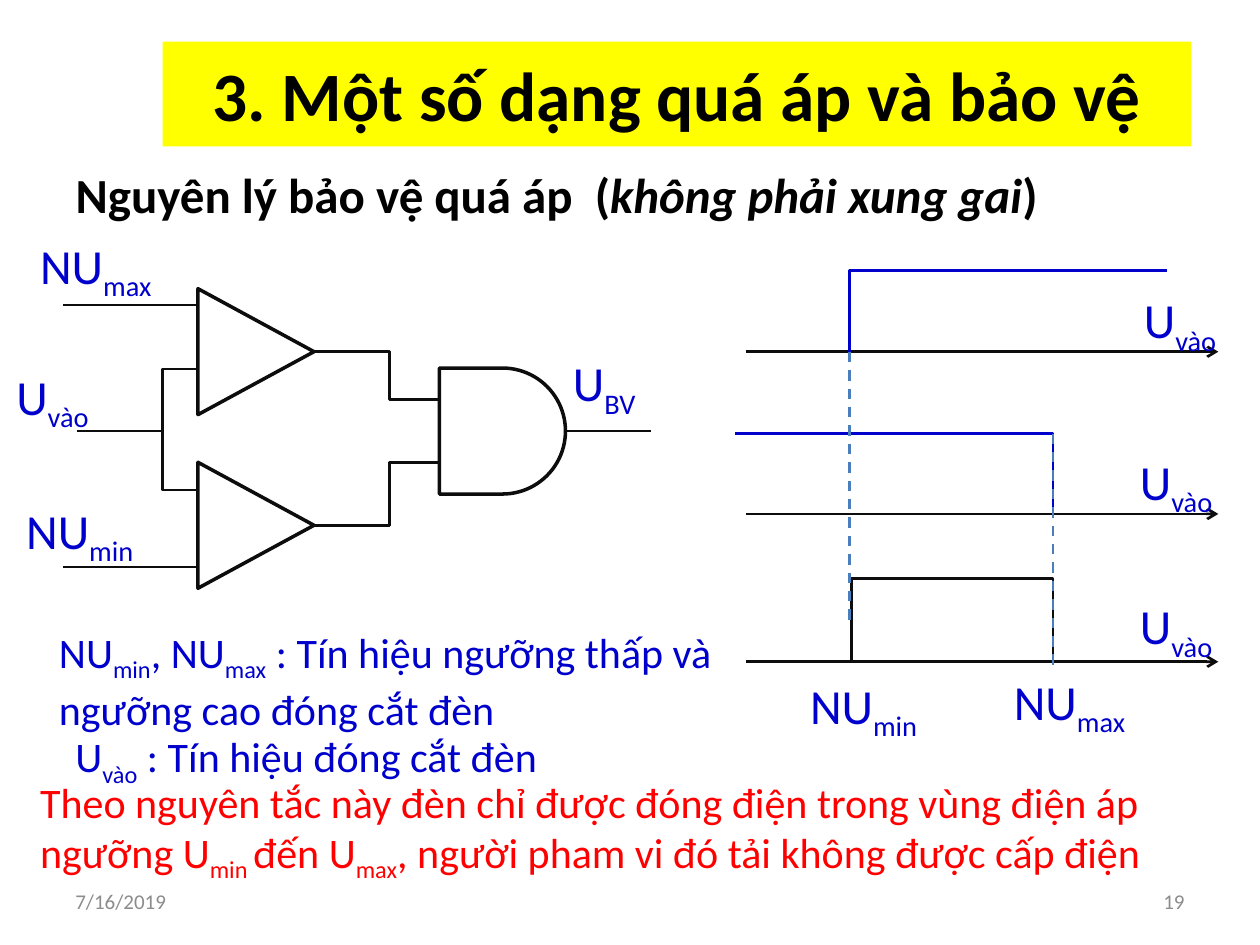
from lxml import etree
from pptx import Presentation
from pptx import util as u
from pptx.dml.color import RGBColor
from pptx.enum import dml, shapes, text
from pptx.oxml.ns import qn

INK, BLUE, DASH, RED, GREY = "0D0D0D", "0000CC", "4B7EBC", "FF0000", "8C8C8C"
BLACK, YELLOW = "000000", "FFFF00"


def rgb(code):
    return RGBColor.from_string(code)


class Sheet:
    """The current slide and its style; all positions are in centimetres."""
    font = "Calibri"

    def __init__(self, slide):
        self.s = slide

    def style(self, r, size, color, bold=None, italic=None):
        f = r.font
        f.name, f.size, f.bold, f.italic = self.font, u.Pt(size), bold, italic
        f.color.rgb = rgb(color)

    def place(self, sp, x, y, w, h):
        sp.left, sp.top, sp.width, sp.height = map(u.Cm, (x, y, w, h))

    def pen(self, sp, color, width):
        sp.line.color.rgb = rgb(color)
        sp.line.width = u.Pt(width)

    def title(self, words, box, size, fill):
        sp = self.s.shapes.title
        self.place(sp, *box)
        sp.fill.solid()
        sp.fill.fore_color.rgb = rgb(fill)
        tf = sp.text_frame
        tf.text = words
        tf.auto_size = text.MSO_AUTO_SIZE.NONE
        tf.vertical_anchor = text.MSO_ANCHOR.MIDDLE
        self.style(tf.paragraphs[0].runs[0], size, BLACK, bold=True)

    def body(self, parts, box, size):
        """Fill the body with (words, italic) parts, without a bullet."""
        sp = self.s.placeholders[1]
        self.place(sp, *box)
        p = sp.text_frame.paragraphs[0]
        for words, italic in parts:
            r = p.add_run()
            r.text = words
            self.style(r, size, BLACK, bold=True, italic=italic)
        pPr = p._p.get_or_add_pPr()
        pPr.set("marL", "0")
        pPr.set("indent", "0")
        etree.SubElement(pPr, qn("a:buNone"))

    def label(self, words, x, y, w, h=1.7, size=28, color=BLUE,
              align=text.PP_ALIGN.LEFT, anchor=text.MSO_ANCHOR.TOP):
        """Add a text box; parts between underscores become subscripts."""
        tf = self.s.shapes.add_textbox(*map(u.Cm, (x, y, w, h))).text_frame
        tf.word_wrap = True
        tf.vertical_anchor = anchor
        p = tf.paragraphs[0]
        p.alignment = align
        for i, part in enumerate(words.split("_")):
            if part:
                r = p.add_run()
                r.text = part
                self.style(r, size, color)
                if i % 2:
                    r._r.get_or_add_rPr().set("baseline", "-25000")

    def gate(self, kind, x, y, w, h, rotation=0):
        sp = self.s.shapes.add_shape(kind, *map(u.Cm, (x, y, w, h)))
        sp.rotation = rotation
        sp.shadow.inherit = False
        sp.fill.background()
        self.pen(sp, INK, 2)

    def trace(self, points, color=INK):
        """Draw an open line with corners."""
        start, *rest = [(u.Cm(x), u.Cm(y)) for x, y in points]
        fb = self.s.shapes.build_freeform(*start)
        fb.add_line_segments(rest, close=False)
        sp = fb.convert_to_shape()
        sp.shadow.inherit = False
        sp.fill.background()
        self.pen(sp, color, 1.5)

    def line(self, x1, y1, x2, y2, color=INK, dashed=False, arrow=False):
        c = self.s.shapes.add_connector(
            shapes.MSO_CONNECTOR.STRAIGHT, *map(u.Cm, (x1, y1, x2, y2)))
        self.pen(c, color, 1.5)
        if dashed:
            c.line.dash_style = dml.MSO_LINE.DASH
        if arrow:
            etree.SubElement(c.line._get_or_add_ln(), qn("a:tailEnd"), type="arrow")
        etree.SubElement(c._element.spPr, qn("a:effectLst"))


def draw_circuit(sh):
    for y in (5.92, 9.42):
        sh.gate(shapes.MSO_SHAPE.ISOSCELES_TRIANGLE, 3.89, y, 2.54, 2.34, 90)
    sh.gate(shapes.MSO_SHAPE.FLOWCHART_DELAY, 8.86, 7.42, 2.54, 2.54)
    for y_out, y_in in ((7.09, 8.05), (10.59, 9.32)):
        sh.trace([(6.27, y_out), (7.85, y_out), (7.85, y_in), (8.86, y_in)])
    sh.trace([(3.96, 7.44), (3.28, 7.44), (3.28, 9.88), (4.01, 9.88)])
    for x1, x2, y in ((1.27, 3.99, 6.15), (1.27, 3.99, 11.43),
                      (11.4, 13.13, 8.69), (1.55, 3.25, 8.69)):
        sh.line(x1, y, x2, y)
    sh.label("NU_max_", 0.56, 4.62, 3.1)
    sh.label("U_vào_", 0.08, 7.26, 3.18)
    sh.label("NU_min_", 0.28, 9.96, 3)
    sh.label("U_BV_", 11.3, 6.99, 2.54)


def draw_timing(sh):
    low, high = 17.12, 21.23
    axes = (7.09, 10.36, 13.34)
    for y in axes:
        sh.line(15.04, y, 24.56, y, arrow=True)
    sh.trace([(low, axes[0]), (low, 5.46), (23.52, 5.46)], BLUE)
    sh.trace([(high, axes[1]), (high, 8.74), (14.81, 8.74)], BLUE)
    sh.trace([(high, axes[2]), (high, 11.66), (17.17, 11.66), (17.17, axes[2])])
    sh.line(low, axes[0], low, 12.5, DASH, dashed=True)
    sh.line(high, 8.74, high, 13.46, DASH, dashed=True)
    for x, y in ((22.81, 5.72), (22.73, 8.97), (22.73, 11.89)):
        sh.label("U_vào_", x, y, 2.54)
    sh.label("NU_max_", 20.19, 13.41, 3.35)
    sh.label("NU_min_", 16.08, 13.49, 3.1)


def main():
    prs = Presentation()
    prs.slide_width, prs.slide_height = u.Cm(25.4), u.Cm(19.05)
    sh = Sheet(prs.slides.add_slide(prs.slide_layouts[1]))

    sh.title("3. Một số dạng quá áp và bảo vệ", (3.28, 0.84, 20.73, 2.11), 39.6, YELLOW)
    sh.body([("Nguyên lý bảo vệ quá áp  (", False), ("không phải xung gai", True),
             (")", False)], (1.27, 3.18, 22.25, 2.54), 28)
    draw_circuit(sh)
    draw_timing(sh)

    sh.label("U_vào_ : Tín hiệu đóng cắt đèn", 1.27, 14.61, 11.86, size=24)
    sh.label("NU_min_, NU_max_ : Tín hiệu ngưỡng thấp và ngưỡng cao đóng cắt đèn",
             0.94, 12.5, 13.87, 2.57, size=24)
    sh.label("Theo nguyên tắc này đèn chỉ được đóng điện trong vùng điện áp ngưỡng "
             "U_min _đến U_max_, người pham vi đó tải không được cấp điện",
             0.56, 15.52, 24.71, 2.26, size=24, color=RED)
    for words, x, align in (("7/16/2019", 1.27, text.PP_ALIGN.LEFT),
                            ("19", 18.21, text.PP_ALIGN.RIGHT)):
        sh.label(words, x, 17.65, 5.92, 1.02, 12, GREY, align, text.MSO_ANCHOR.MIDDLE)

    prs.save("out.pptx")


if __name__ == "__main__":
    main()
